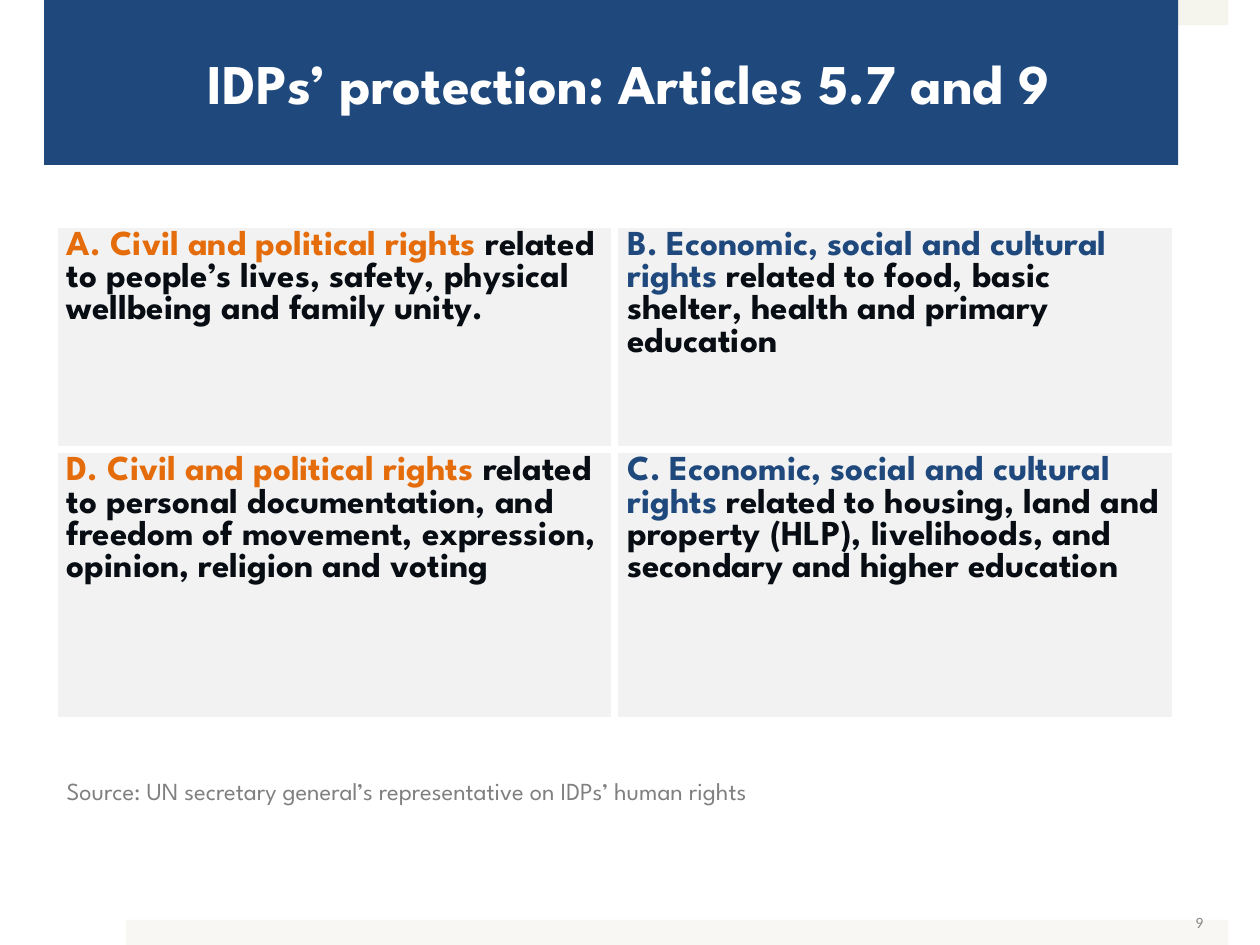
from pptx import Presentation
from pptx.dml.color import RGBColor
from pptx.enum.shapes import MSO_SHAPE as SHAPE
from pptx.enum.text import MSO_ANCHOR as ANCHOR, PP_ALIGN as ALIGN
from pptx.oxml import parse_xml
from pptx.oxml.ns import nsdecls
from pptx.util import Pt

FONT = "League Spartan"
BLUE, ORANGE, INK, WHITE = "1F497D", "E46C0A", "070D13", "FFFFFF"
CIVIL = "Civil and political rights "
SOCIAL = "Economic, social and cultural rights "
RIGHTS = [
    [("A. " + CIVIL, "related to people’s lives, safety, physical wellbeing and family unity.", ORANGE),
     ("B. " + SOCIAL, "related to food, basic shelter, health and primary education", BLUE)],
    [("D. " + CIVIL, "related to personal documentation, and freedom of movement, "
      "expression, opinion, religion and voting", ORANGE),
     ("C. " + SOCIAL, "related to housing, land and property (HLP), livelihoods, "
      "and secondary and higher education", BLUE)],
]


def rgb(color):
    return RGBColor.from_string(color)


def write(tf, runs, size, font=FONT, bold=False, align=ALIGN.LEFT,
          anchor=ANCHOR.TOP, insets=(7.2, 3.6, 7.2, 3.6)):
    """Fill a text frame with one paragraph of (text, color) runs."""
    tf.word_wrap = True
    tf.vertical_anchor = anchor
    tf.margin_left, tf.margin_top, tf.margin_right, tf.margin_bottom = map(Pt, insets)
    p = tf.paragraphs[0]
    p.alignment = align
    for text, color in runs:
        r = p.add_run()
        r.text = text
        r.font.name, r.font.size, r.font.bold = font, Pt(size), bold
        r.font.color.rgb = rgb(color)


def add_rect(s, box, color):
    sp = s.shapes.add_shape(SHAPE.RECTANGLE, *map(Pt, box))
    sp.shadow.inherit = False
    sp.fill.solid()
    sp.fill.fore_color.rgb = rgb(color)
    sp.line.fill.background()
    return sp


def add_text(s, box, text, color, size, **fmt):
    tf = s.shapes.add_textbox(*map(Pt, box)).text_frame
    write(tf, [(text, color)], size, **fmt)


def add_title(s, box, text):
    sp = add_rect(s, box, BLUE)
    write(sp.text_frame, [(text, WHITE)], 32, bold=True, anchor=ANCHOR.MIDDLE,
          insets=(93.6, 3.6, 21.6, 3.6))


def set_borders(cell, color, width):
    tcPr = cell._tc.get_or_add_tcPr()
    for i, side in enumerate(("lnL", "lnR", "lnT", "lnB")):
        tcPr.insert(i, parse_xml(
            f'<a:{side} {nsdecls("a")} w="{Pt(width)}"><a:solidFill>'
            f'<a:srgbClr val="{color}"/></a:solidFill></a:{side}>'))


def add_rights_table(s, box, row_heights):
    table = s.shapes.add_table(len(RIGHTS), len(RIGHTS[0]), *map(Pt, box)).table
    table.first_row = table.horz_banding = False
    for column in table.columns:
        column.width = Pt(box[2] / len(RIGHTS[0]))
    for row, height, rights in zip(table.rows, row_heights, RIGHTS):
        row.height = Pt(height)
        for cell, (heading, detail, color) in zip(row.cells, rights):
            cell.fill.solid()
            cell.fill.fore_color.rgb = rgb("F2F2F2")
            set_borders(cell, WHITE, 4.5)
            write(cell.text_frame, [(heading, color), (detail, INK)], 20, bold=True)
            cell.margin_left = cell.margin_right = Pt(7.2)
            cell.margin_top = cell.margin_bottom = Pt(3.6)


def add_page_frame(s, left, width, number):
    """Draw the pale bands at top and bottom, and the page number."""
    add_rect(s, (left, 0, width, 14.4), "F5F4ED")
    add_rect(s, (left, 525.6, width, 14.4), "F8F7F3")
    add_text(s, (525, 512.6, 167.6, 28.8), number, "898989", 9, font="Calibri",
             align=ALIGN.RIGHT, anchor=ANCHOR.MIDDLE, insets=(5, 2.9, 5, 2.9))


def main():
    prs = Presentation()
    prs.slide_width, prs.slide_height = Pt(720), Pt(540)
    s = prs.slides.add_slide(prs.slide_layouts[6])
    add_page_frame(s, 72, 630, "9")
    add_title(s, (25.2, 0, 648, 94.3), "IDPs’ protection: Articles 5.7 and 9")
    add_rights_table(s, (31, 128.2, 640.8, 283.7), (128.9, 154.8))
    add_text(s, (31, 440, 516.2, 24.5),
             "Source: UN secretary general’s representative on IDPs’ human rights",
             "808080", 14)
    prs.save("out.pptx")


if __name__ == "__main__":
    main()
